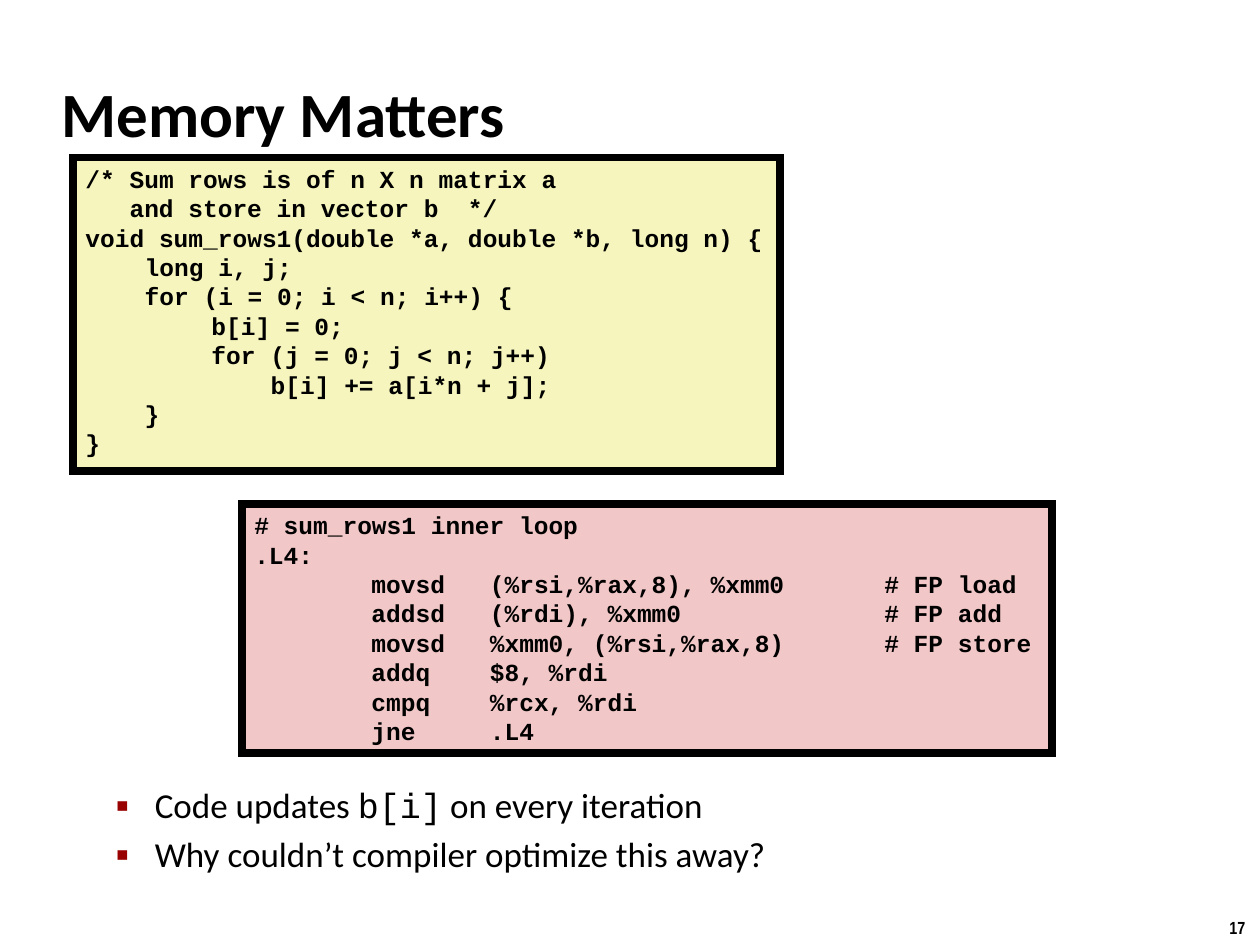
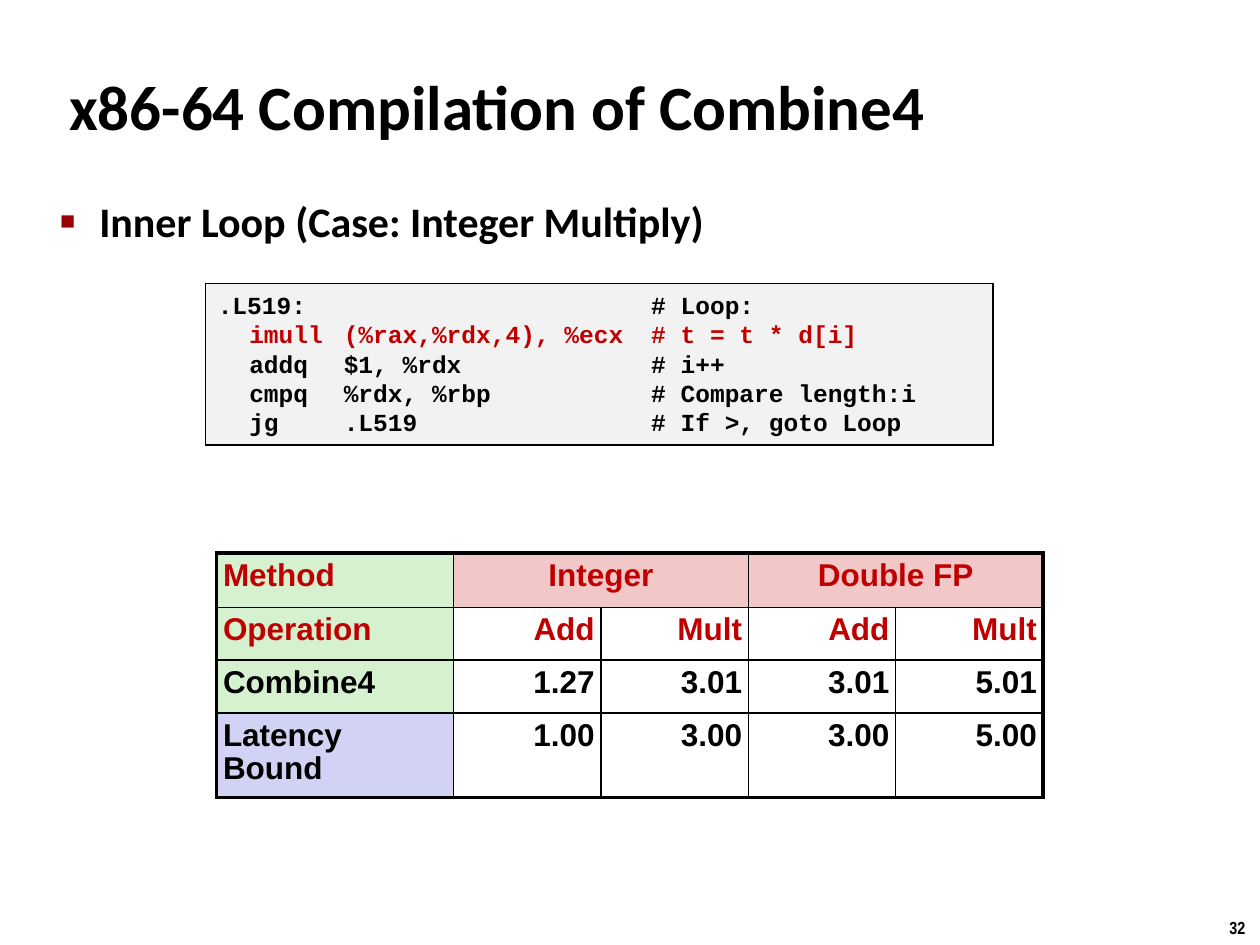
import pptx
import pptx.dml.color
import pptx.enum.shapes
import pptx.enum.text
import pptx.oxml
import pptx.oxml.ns
import pptx.util
from lxml import etree

# Shared look; positions count cells of a 100 x 75 grid
COLS, ROWS = 100, 75
CELL = pptx.util.Inches(0.1)
BLACK, WHITE, RED, BULLET_RED = "000000", "FFFFFF", "C00000", "990000"
YELLOW, PINK, GRAY, GREEN, LILAC = "F6F5BD", "F1C7C7", "F2F2F2", "D5F1CF", "D2D2F4"
HEADING, CODE, TABLE, NUMBER = "Calibri", "Courier New", "Arial", "Arial Narrow"
ALIGN = pptx.enum.text.PP_ALIGN
THIN, THICK = 1, 2.25


def rgb(color):
    return pptx.dml.color.RGBColor.from_string(color)


def grid(*cells):
    return [round(c * CELL) for c in cells]


def sub(parent, tag, **attrs):
    return etree.SubElement(parent, pptx.oxml.ns.qn(tag),
                            {k: str(v) for k, v in attrs.items()})


def style(p, name, size, color=BLACK, bold=True):
    p.font.name, p.font.size, p.font.bold = name, pptx.util.Pt(size), bold
    p.font.color.rgb = rgb(color)


def indent(p, left, first=0):
    pPr = p._p.get_or_add_pPr()
    pPr.set("marL", str(pptx.util.Inches(left)))
    pPr.set("indent", str(pptx.util.Inches(first)))
    return pPr


def paragraphs(tf, items):
    """Pair each item with a paragraph of the text frame."""
    for i, item in enumerate(items):
        yield (tf.add_paragraph() if i else tf.paragraphs[0]), item


def text_box(slide, at, wrap=True):
    tf = slide.shapes.add_textbox(*grid(*at)).text_frame
    tf.word_wrap = wrap
    return tf


def add_slide(prs, title, title_at, number):
    slide = prs.slides.add_slide(prs.slide_layouts[6])
    slide.background.fill.solid()
    slide.background.fill.fore_color.rgb = rgb(WHITE)

    # Page number
    p = text_box(slide, (96.6, 72.3, 3.4, 2.7), wrap=False).paragraphs[0]
    p.text = str(number)
    style(p, NUMBER, 10)

    # Title
    tf = text_box(slide, (*title_at, 83, 8.3))
    tf.vertical_anchor = pptx.enum.text.MSO_ANCHOR.MIDDLE
    p = tf.paragraphs[0]
    p.text = title
    indent(p, 0.13, -0.13)
    style(p, HEADING, 36)
    return slide


def bullet_list(slide, at, items, size, left, char, percent, bold=False):
    """Each item is a list of (text, font) runs."""
    for i, (p, runs) in enumerate(paragraphs(text_box(slide, at), items)):
        pPr = indent(p, left, -0.31)
        sub(sub(pPr, "a:buClr"), "a:srgbClr", val=BULLET_RED)
        sub(pPr, "a:buSzPct", val=percent * 1000)
        sub(pPr, "a:buFont", typeface=TABLE)
        sub(pPr, "a:buChar", char=char)
        p.space_before = pptx.util.Pt(0.2 * size if i else 0)
        style(p, HEADING, size, bold=bold)
        for text, font in runs:
            r = p.add_run()
            r.text, r.font.name = text, font


def code_box(slide, at, lines, fill, border, tabs=()):
    """Each line is (indent in inches, text, colour)."""
    sp = slide.shapes.add_shape(pptx.enum.shapes.MSO_SHAPE.RECTANGLE, *grid(*at))
    sp.shadow.inherit = False
    sp.fill.solid()
    sp.fill.fore_color.rgb = rgb(fill)
    sp.line.color.rgb = rgb(BLACK)
    sp.line.width = pptx.util.Pt(border)
    sub(sp.line._get_or_add_ln(), "a:miter", lim=800000)
    tf = sp.text_frame
    tf.word_wrap = False
    tf.vertical_anchor = pptx.enum.text.MSO_ANCHOR.TOP
    for p, (left, text, color) in paragraphs(tf, lines):
        p.text, p.alignment = text, ALIGN.LEFT
        # An explicit margin would override the tab stops
        if left:
            indent(p, left)
        if tabs:
            tab_list = sub(p._p.get_or_add_pPr(), "a:tabLst")
            for stop in tabs:
                sub(tab_list, "a:tab", pos=pptx.util.Inches(stop), algn="l")
        style(p, CODE, 14, color)


def cell_borders(cell, widths):
    tcPr = cell._tc.get_or_add_tcPr()
    for side, width in widths.items():
        ln = sub(tcPr, f"a:ln{side}", w=pptx.util.Pt(width))
        sub(sub(ln, "a:solidFill"), "a:srgbClr", val=BLACK)


def results_table(slide, at, rows, col_widths, row_heights, label_fills):
    last_row, last_col = len(rows) - 1, len(col_widths) - 1
    table = slide.shapes.add_table(len(rows), len(col_widths), *grid(*at)).table
    for col, width in zip(table.columns, grid(*col_widths)):
        col.width = width
    for row, height in zip(table.rows, grid(*row_heights)):
        row.height = height

    for i, values in enumerate(rows):
        # The last heading of the first row starts one column earlier
        right_edge = last_col if i else last_col - 1
        for j, value in enumerate(values):
            cell = table.cell(i, j)
            cell.margin_left = cell.margin_right = grid(0.5)[0]
            cell_borders(cell, {"L": THIN if j else THICK,
                                "R": THICK if j >= right_edge else THIN,
                                "T": THIN if i else THICK,
                                "B": THICK if i == last_row else THIN})
            fill = label_fills[i] if j == 0 else WHITE if i else PINK
            cell.fill.solid()
            cell.fill.fore_color.rgb = rgb(fill)
            p = cell.text_frame.paragraphs[0]
            p.text, p.line_spacing = value, 0.95
            p.alignment = ALIGN.LEFT if j == 0 else ALIGN.RIGHT if i else ALIGN.CENTER
            style(p, TABLE, 18, RED if i < 2 else BLACK)

    # Each heading of the first row covers two columns
    for j in range(1, last_col, 2):
        table.cell(0, j).merge(table.cell(0, j + 1))


def memory_slide(prs):
    slide = add_slide(prs, "Memory Matters", (3.9, 4.8), 17)
    bullet_list(slide, (3.2, 61.7, 90.9, 8.8), [
        [("Code updates ", HEADING), ("b[i]", CODE), (" on every iteration", HEADING)],
        [("Why couldn’t compiler optimize this away?", HEADING)],
    ], size=20, left=0.81, char="▪", percent=110)

    assembly = ["# sum_rows1 inner loop",
                ".L4:",
                "\tmovsd\t(%rsi,%rax,8), %xmm0\t# FP load",
                "\taddsd\t(%rdi), %xmm0\t# FP add",
                "\tmovsd\t%xmm0, (%rsi,%rax,8)\t# FP store",
                "\taddq\t$8, %rdi",
                "\tcmpq\t%rcx, %rdi",
                "\tjne\t.L4"]
    code_box(slide, (19.2, 40, 64.3, 19.8), [(0, line, BLACK) for line in assembly],
             PINK, 4.5, tabs=(0.93, 1.87, 5))

    source = [(0, "/* Sum rows is of n X n matrix a"),
              (0.35, "and store in vector b  */"),
              (0, "void sum_rows1(double *a, double *b, long n) {"),
              (0.47, "long i, j;"),
              (0.47, "for (i = 0; i < n; i++) {"),
              (1, "b[i] = 0;"),
              (1, "for (j = 0; j < n; j++)"),
              (1.47, "b[i] += a[i*n + j];"),
              (0.47, "}"),
              (0, "}")]
    code_box(slide, (5.8, 12.5, 56.1, 24.9),
             [(left, line, BLACK) for left, line in source], YELLOW, 4.5)


def compilation_slide(prs):
    slide = add_slide(prs, "x86-64 Compilation of Combine4", (4.5, 4.2), 32)
    bullet_list(slide, (3.8, 15, 90.3, 7.5),
                [[("Inner Loop (Case: Integer Multiply)", HEADING)]],
                size=24, left=0.31, char="■", percent=60, bold=True)

    code_box(slide, (16.3, 22.5, 62.5, 12.8), [
        (0, ".L519:\t\t# Loop:", BLACK),
        (0, "\timull\t(%rax,%rdx,4), %ecx\t# t = t * d[i]", RED),
        (0, "\taddq\t$1, %rdx\t# i++", BLACK),
        (0, "\tcmpq\t%rdx, %rbp\t# Compare length:i", BLACK),
        (0, "\tjg\t.L519\t# If >, goto Loop", BLACK),
    ], GRAY, 1, tabs=(0.25, 1, 3.44))

    results_table(slide, (17.2, 43.9, 65.6, 19.4), [
        ["Method", "Integer", "", "Double FP", ""],
        ["Operation", "Add", "Mult", "Add", "Mult"],
        ["Combine4", "1.27", "3.01", "3.01", "5.01"],
        ["Latency Bound", "1.00", "3.00", "3.00", "5.00"],
    ], [18.8] + [11.7] * 4, [4.3, 4.2, 4.2, 6.7], [GREEN] * 3 + [LILAC])


def main():
    prs = pptx.Presentation()
    prs.slide_width, prs.slide_height = grid(COLS, ROWS)
    memory_slide(prs)
    compilation_slide(prs)
    prs.save("out.pptx")


if __name__ == "__main__":
    main()
